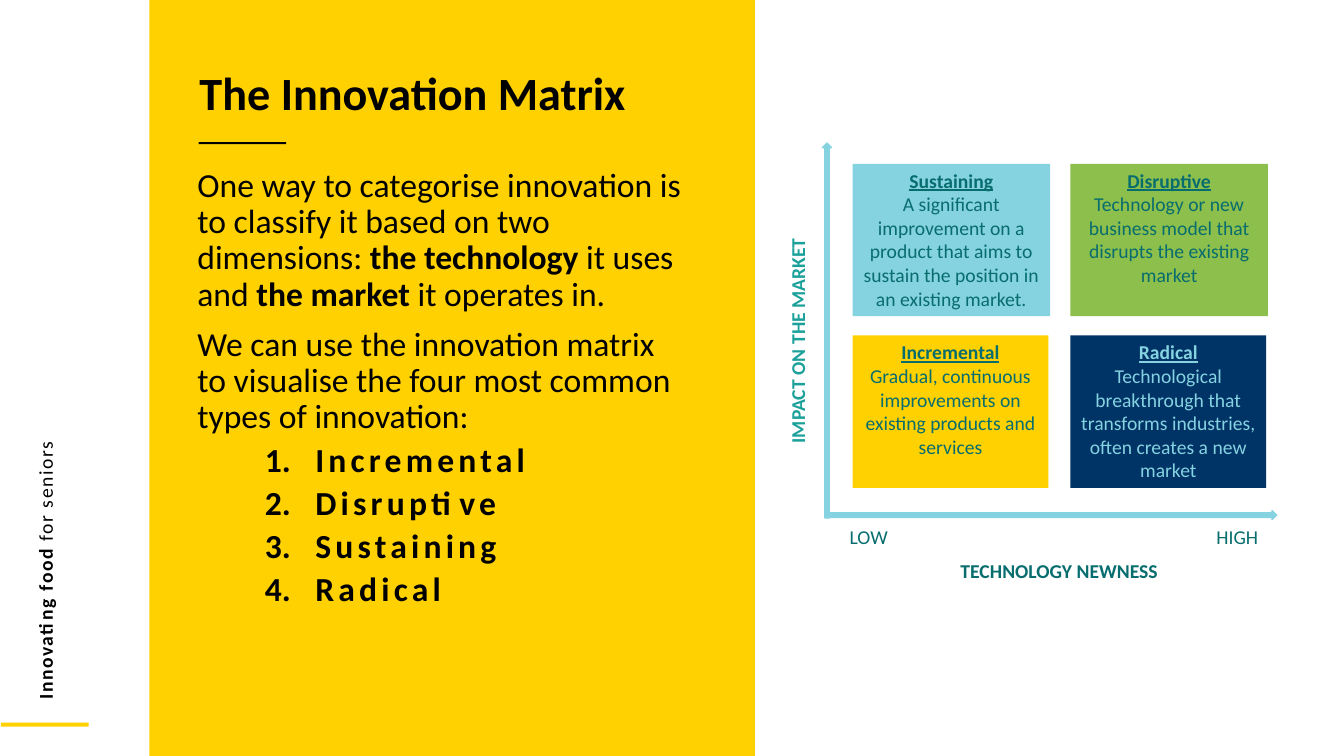
from dataclasses import dataclass
from typing import NamedTuple

from lxml import etree
from pptx import Presentation
from pptx.dml.color import RGBColor
from pptx.enum.shapes import MSO_SHAPE
from pptx.enum.text import MSO_ANCHOR, PP_ALIGN
from pptx.oxml.ns import qn
from pptx.util import Pt

RECT, UP, RIGHT = MSO_SHAPE.RECTANGLE, MSO_SHAPE.UP_ARROW, MSO_SHAPE.RIGHT_ARROW
TOP, CENTER, LEFT = MSO_ANCHOR.TOP, PP_ALIGN.CENTER, PP_ALIGN.LEFT


@dataclass(frozen=True)
class Theme:
    font: str = "Calibri"
    title_size: int = 33
    body_size: int = 24
    label_size: int = 14
    black: str = "000000"
    yellow: str = "FFD100"
    sky: str = "85D2E1"
    green: str = "8CBF4B"
    navy: str = "003366"
    teal: str = "086D6E"
    bright_teal: str = "1BA19A"


THEME = Theme()


class Box(NamedTuple):
    """A region of the slide, in points."""
    x: float
    y: float
    w: float
    h: float

    def inner(self, dx, dy, w, h):
        return Box(self.x + dx, self.y + dy, w, h)

    def lengths(self):
        return [Pt(value) for value in self]


def add_block(slide, box, fill, kind=RECT, outline=None):
    block = slide.shapes.add_shape(kind, *box.lengths())
    block.shadow.inherit = False
    block.fill.solid()
    block.fill.fore_color.rgb = RGBColor.from_string(fill)
    if outline:
        block.line.color.rgb = RGBColor.from_string(outline)
        block.line.width = Pt(1)
    else:
        block.line.fill.background()
    return block


def add_text_area(slide, box, rotation=0):
    area = slide.shapes.add_textbox(*box.lengths())
    area.rotation = rotation
    area.text_frame.word_wrap = True
    return area.text_frame


def add_paragraph(frame, first, align=LEFT, line_spacing=None, before=0):
    paragraph = frame.paragraphs[0] if first else frame.add_paragraph()
    paragraph.alignment = align
    if line_spacing:
        paragraph.line_spacing = line_spacing
    if before and not first:
        paragraph.space_before = Pt(before)
    return paragraph


def add_run(paragraph, text, size, color, bold=False, underline=False, tracking=0):
    run = paragraph.add_run()
    run.text = text
    font = run.font
    font.name, font.size = THEME.font, Pt(size)
    font.bold, font.underline = bold, underline
    font.color.rgb = RGBColor.from_string(color)
    if tracking:
        run._r.get_or_add_rPr().set("spc", str(round(tracking * 100)))


def set_indent(paragraph, margin, hanging=0, numbered=False):
    properties = paragraph._p.get_or_add_pPr()
    properties.set("marL", str(Pt(margin)))
    properties.set("indent", str(Pt(-hanging)))
    if numbered:
        etree.SubElement(properties, qn("a:buFont"), typeface="+mj-lt")
        etree.SubElement(properties, qn("a:buAutoNum"), type="arabicPeriod")


def add_label(slide, box, text, color, bold=False, rotation=0):
    paragraph = add_paragraph(add_text_area(slide, box, rotation), True)
    add_run(paragraph, text, THEME.label_size, color, bold)


def add_side_strip(slide, box):
    # Accent bar and vertical tagline
    add_block(slide, box.inner(0.7, 516.2, 62.6, 2.9), THEME.yellow)
    tagline = add_text_area(slide, box.inner(-239, 223.2, 542.9, 24.5), 270)
    paragraph = add_paragraph(tagline, True)
    for text, bold in (("Innovating food ", True), ("for seniors", False)):
        add_run(paragraph, text, THEME.label_size, THEME.black, bold, tracking=1.1)


def add_intro_panel(slide, box):
    add_block(slide, box, THEME.yellow)
    add_block(slide, box.inner(35.3, 101.5, 62.6, 1.4), THEME.black)

    # Introduction, with key terms in bold
    passages = (
        (("One way to categorise innovation is to classify it based on two dimensions: ", False),
         ("the technology ", True), ("it uses and ", False),
         ("the market ", True), ("it operates in.", False)),
        (("We can use the innovation matrix to visualise the four most common "
          "types of innovation:", False),),
    )
    intro = add_text_area(slide, box.inner(21.6, 116.6, 371.5, 356.4))
    for number, passage in enumerate(passages):
        paragraph = add_paragraph(intro, number == 0, line_spacing=0.9, before=10)
        set_indent(paragraph, 5.76)
        for text, bold in passage:
            add_run(paragraph, text, THEME.body_size, THEME.black, bold)

    # Numbered types of innovation
    for innovation in ("Incremental", "Disruptive", "Sustaining", "Radical"):
        paragraph = add_paragraph(intro, False, line_spacing=0.9, before=5)
        set_indent(paragraph, 90, 36, numbered=True)
        add_run(paragraph, innovation, THEME.body_size, THEME.black, True, tracking=3)

    # Title
    title = add_text_area(slide, box.inner(28.8, 46.8, 371.5, 46))
    paragraph = add_paragraph(title, True, line_spacing=0.9)
    add_run(paragraph, "The Innovation Matrix", THEME.title_size, THEME.black, True)


def add_quadrant(slide, box, heading, description, fill, color):
    frame = add_block(slide, box, fill).text_frame
    frame.word_wrap = True
    frame.vertical_anchor = TOP
    add_run(add_paragraph(frame, True, CENTER), heading, THEME.label_size, color, True, True)
    add_run(add_paragraph(frame, False, CENTER), description, THEME.label_size, color)


def add_matrix(slide, box):
    # Quadrants, row by row
    quadrants = (
        ("Sustaining", "A significant improvement on a product that aims to sustain "
         "the position in an existing market.", THEME.sky, THEME.teal),
        ("Disruptive", "Technology or new business model that disrupts the existing market",
         THEME.green, THEME.teal),
        ("Incremental", "Gradual, continuous improvements on existing products and services",
         THEME.yellow, THEME.teal),
        ("Radical", "Technological breakthrough that transforms industries, "
         "often creates a new market", THEME.navy, THEME.sky),
    )
    widths = (141.1, 139.9)
    for index, quadrant in enumerate(quadrants):
        row, column = divmod(index, 2)
        place = box.inner(49 + 155.6 * column, 15 + 122.6 * row, widths[row], 108.9)
        add_quadrant(slide, place, *quadrant)

    # Axes
    add_block(slide, box.inner(27.5, 0.2, 6.5, 267.8), THEME.sky, UP, THEME.sky)
    add_block(slide, box.inner(30.8, 262.7, 321.1, 6.5), THEME.sky, RIGHT, THEME.sky)

    # Axis titles and scale ends
    add_label(slide, box.inner(-74, 125.5, 167.8, 24.5), "IMPACT ON THE MARKET",
              THEME.bright_teal, True, 270)
    add_label(slide, box.inner(119, 294, 170.6, 24.5), "TECHNOLOGY NEWNESS", THEME.teal, True)
    add_label(slide, box.inner(39.8, 269.5, 43.9, 24.5), "LOW", THEME.teal)
    add_label(slide, box.inner(301.8, 269.5, 50.4, 24.5), "HIGH", THEME.teal)


def main():
    deck = Presentation()
    deck.slide_width, deck.slide_height = Pt(960), Pt(540)
    slide = deck.slides.add_slide(deck.slide_layouts[6])
    add_side_strip(slide, Box(0, 0, 106.6, 540))
    add_intro_panel(slide, Box(106.6, 0, 432.7, 540))
    add_matrix(slide, Box(560, 102, 352, 318))
    deck.save("out.pptx")


if __name__ == "__main__":
    main()
